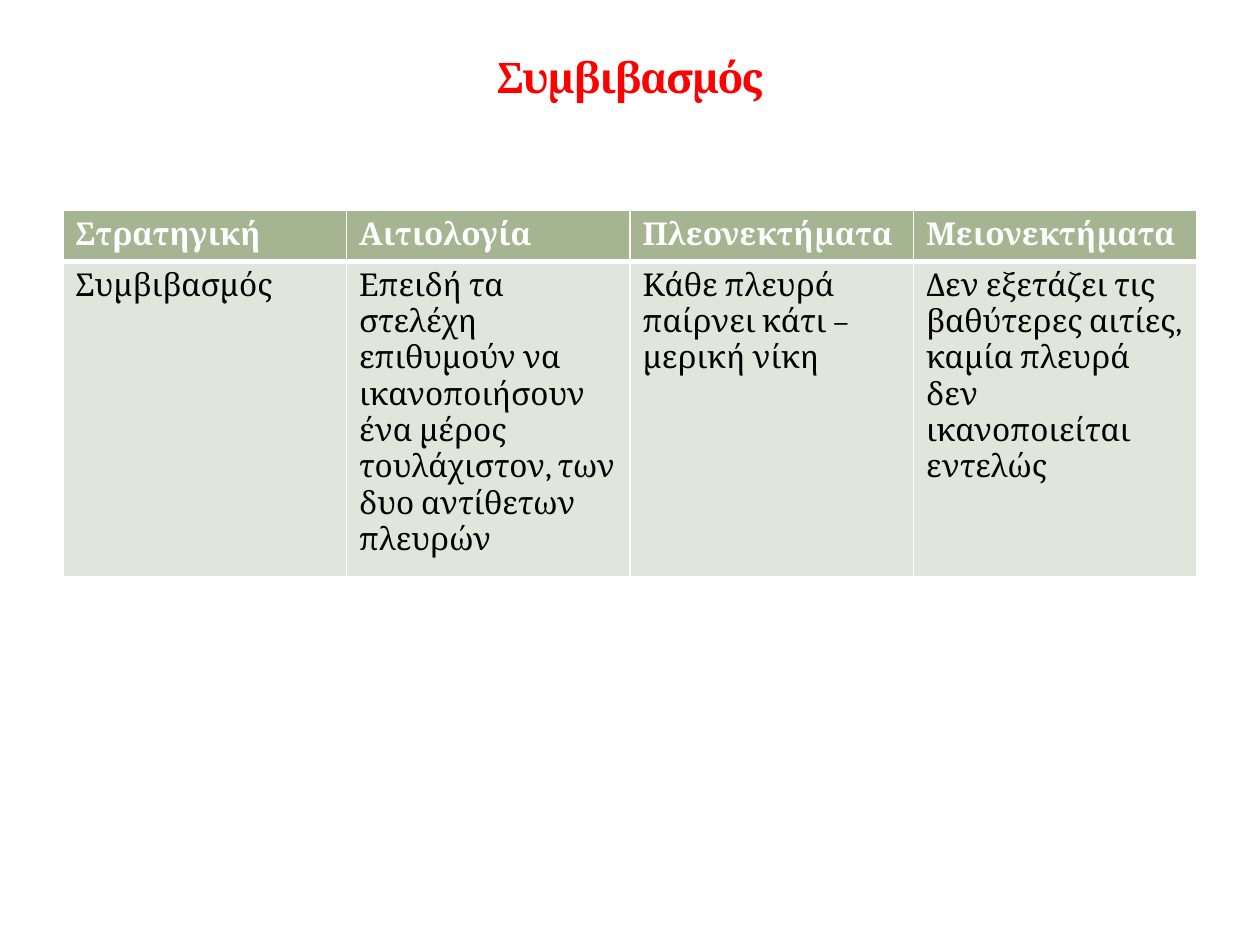
from typing import NamedTuple

from lxml import etree
from pptx import Presentation
from pptx.dml.color import RGBColor
from pptx.enum.text import MSO_ANCHOR, PP_ALIGN
from pptx.oxml.ns import qn
from pptx.util import Cm, Pt

CENTER = PP_ALIGN.CENTER
BOTTOM = MSO_ANCHOR.BOTTOM
RED = RGBColor(0xFF, 0x00, 0x00)
WHITE = RGBColor(0xFF, 0xFF, 0xFF)
BLACK = RGBColor(0x00, 0x00, 0x00)
GREEN = RGBColor(0xA5, 0xB5, 0x92)
PALE = RGBColor(0xE1, 0xE5, 0xDC)
FACE = "Cambria"
LEFT, WIDTH = Cm(1.27), Cm(22.86)


class Column(NamedTuple):
    head: str
    body: str


class Style(NamedTuple):
    size: int
    color: RGBColor
    bold: bool


class Band(NamedTuple):
    style: Style
    fill: RGBColor
    height: Cm
    top: int  # border widths in points
    base: int


TITLE = Style(24, RED, True)
BANDS = (
    Band(Style(18, WHITE, True), GREEN, Cm(1.03), 1, 3),
    Band(Style(18, BLACK, False), PALE, Cm(4.84), 3, 1),
)
COLUMNS = (
    Column("Στρατηγική", "Συμβιβασμός"),
    Column("Αιτιολογία", "Επειδή τα στελέχη επιθυμούν να ικανοποιήσουν ένα μέρος "
           "τουλάχιστον, των δυο αντίθετων πλευρών"),
    Column("Πλεονεκτήματα", "Κάθε πλευρά παίρνει κάτι – μερική νίκη"),
    Column("Μειονεκτήματα", "Δεν εξετάζει τις βαθύτερες αιτίες, καμία πλευρά "
           "δεν ικανοποιείται εντελώς"),
)


def write(frame, text: str, style: Style) -> None:
    frame.text = text
    font = frame.paragraphs[0].font
    font.name, font.size, font.bold = FACE, Pt(style.size), style.bold
    font.color.rgb = style.color


def edge(cell, side: str, width: int, index: int) -> None:
    line = etree.Element(qn(f"a:{side}"), w=str(Pt(width)))
    fill = etree.SubElement(line, qn("a:solidFill"))
    etree.SubElement(fill, qn("a:srgbClr"), val=str(WHITE))
    # Borders come before the fill in the cell properties
    cell._tc.get_or_add_tcPr().insert(index, line)


def draw_cell(cell, text: str, band: Band) -> None:
    write(cell.text_frame, text, band.style)
    cell.fill.solid()
    cell.fill.fore_color.rgb = band.fill
    sides = (("lnL", 1), ("lnR", 1), ("lnT", band.top), ("lnB", band.base))
    for index, (side, width) in enumerate(sides):
        edge(cell, side, width, index)


def draw_title(slide, text: str) -> None:
    frame = slide.shapes.add_textbox(LEFT, Cm(0.43), WIDTH, Cm(1.75)).text_frame
    frame.word_wrap = True
    frame.vertical_anchor = BOTTOM
    write(frame, text, TITLE)
    para = frame.paragraphs[0]
    para.alignment = CENTER
    # Tighten the letters by one point
    para.runs[0].font._element.set("spc", "-100")


def draw_table(slide) -> None:
    height = sum(band.height for band in BANDS)
    table = slide.shapes.add_table(
        len(BANDS), len(COLUMNS), LEFT, Cm(4.24), WIDTH, height).table
    for row, band in enumerate(BANDS):
        table.rows[row].height = band.height
        for col, texts in enumerate(COLUMNS):
            draw_cell(table.cell(row, col), texts[row], band)


def main() -> None:
    deck = Presentation()
    deck.slide_width, deck.slide_height = Cm(25.4), Cm(19.05)
    slide = deck.slides.add_slide(deck.slide_layouts[6])
    draw_title(slide, "Συμβιβασμός")
    draw_table(slide)
    deck.save("out.pptx")


if __name__ == "__main__":
    main()
